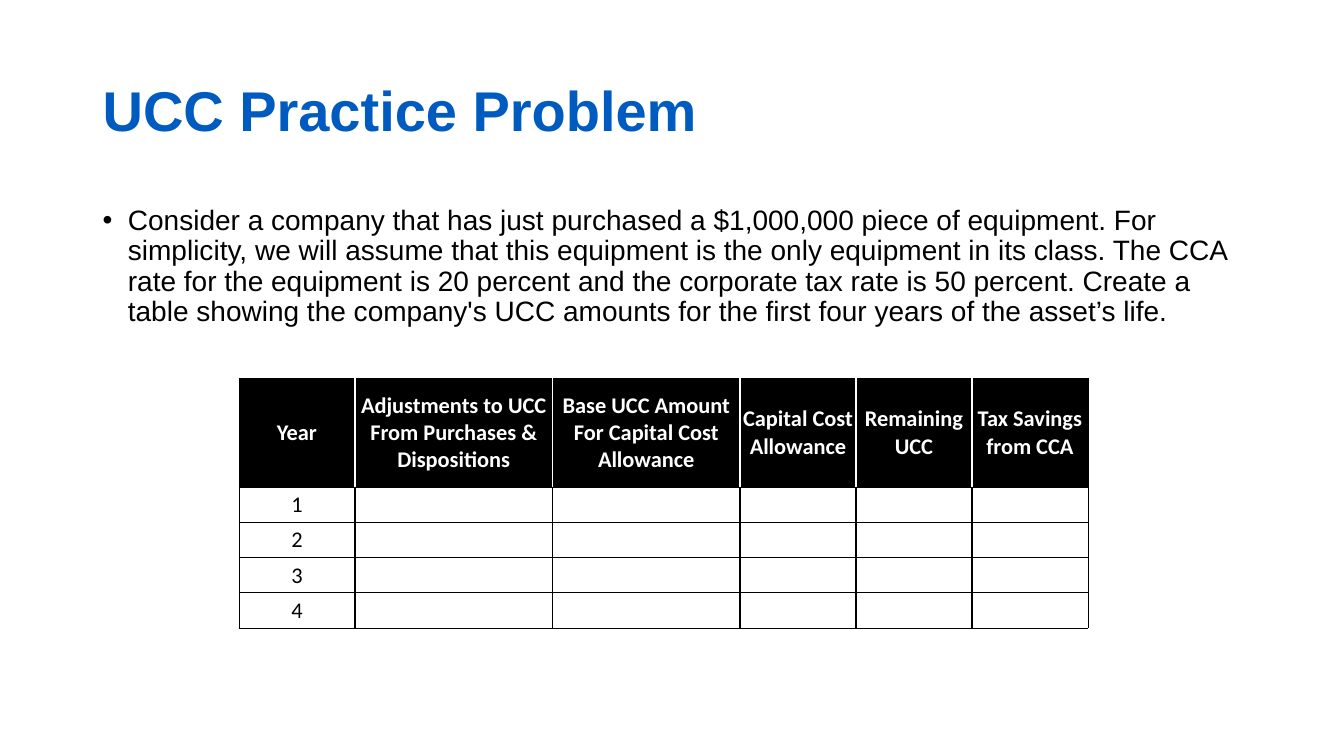
from lxml import etree
from pptx import Presentation
from pptx.dml.color import RGBColor
from pptx.enum.text import MSO_ANCHOR, PP_ALIGN
from pptx.oxml.ns import qn
from pptx.util import Inches, Pt

MIDDLE, TOP = MSO_ANCHOR.MIDDLE, MSO_ANCHOR.TOP
CENTER = PP_ALIGN.CENTER
BLANK = 6
COLORS = {"title": "005BC0", "ink": "000000", "paper": "FFFFFF"}
TITLE = "UCC Practice Problem"
PROBLEM = (
    "Consider a company that has just purchased a $1,000,000 piece of equipment. "
    "For simplicity, we will assume that this equipment is the only equipment in "
    "its class. The CCA rate for the equipment is 20 percent and the corporate tax "
    "rate is 50 percent. Create a table showing the company's UCC amounts for the "
    "first four years of the asset’s life."
)
HEADERS = [
    "Year",
    "Adjustments to UCC From Purchases & Dispositions",
    "Base UCC Amount For Capital Cost Allowance",
    "Capital Cost Allowance",
    "Remaining UCC",
    "Tax Savings from CCA",
]
COL_WIDTHS = [1.15, 1.96, 1.86, 1.15, 1.15, 1.15]
YEARS = 4
HEADER_HEIGHT, YEAR_HEIGHT = 1.08, 0.35


def color(name):
    return RGBColor.from_string(COLORS[name])


def add_run(p, text, size, font, color_name, bold=False):
    r = p.add_run()
    r.text = text
    r.font.size = Pt(size)
    r.font.name = font
    r.font.bold = bold
    r.font.color.rgb = color(color_name)


def add_text_box(slide, box, anchor):
    """Add a wrapping text box and return its first paragraph."""
    tf = slide.shapes.add_textbox(*map(Inches, box)).text_frame
    tf.word_wrap = True
    tf.vertical_anchor = anchor
    p = tf.paragraphs[0]
    p.line_spacing = 0.9
    return p


def add_title(slide, box):
    p = add_text_box(slide, box, MIDDLE)
    add_run(p, TITLE, 40, "Arial", "title", bold=True)


def add_problem(slide, box):
    p = add_text_box(slide, box, TOP)
    p.space_before = Pt(12)
    pPr = p._p.get_or_add_pPr()
    pPr.set("marL", str(Inches(0.25)))
    pPr.set("indent", str(Inches(-0.25)))
    etree.SubElement(pPr, qn("a:buFont"), typeface="Arial")
    etree.SubElement(pPr, qn("a:buChar"), char="•")
    add_run(p, PROBLEM, 20, "Arial", "ink")


def set_borders(cell, borders):
    """Draw (color name, points) lines on the left, right, top and bottom."""
    tcPr = cell._tc.get_or_add_tcPr()
    for i, (side, (name, points)) in enumerate(zip("LRTB", borders)):
        ln = etree.Element(qn(f"a:ln{side}"), w=str(Pt(points)))
        fill = etree.SubElement(ln, qn("a:solidFill"))
        etree.SubElement(fill, qn("a:srgbClr"), val=COLORS[name])
        tcPr.insert(i, ln)


def cell_borders(row, col):
    """Thin frame around table and header, white dividers inside the header."""
    thin, inner = ("ink", 0.5), ("ink", 1)
    divider = ("paper", 1) if row == 0 else inner
    return (
        thin if col == 0 else divider,
        thin if col == len(HEADERS) - 1 else divider,
        thin if row <= 1 else inner,
        thin if row in (0, YEARS) else inner,
    )


def format_cell(cell, row, col):
    cell.margin_left = cell.margin_right = cell.margin_top = Inches(0.01)
    cell.margin_bottom = 0
    cell.vertical_anchor = MIDDLE
    p = cell.text_frame.paragraphs[0]
    p.alignment = CENTER
    if row == 0:
        cell.fill.solid()
        cell.fill.fore_color.rgb = color("ink")
        add_run(p, HEADERS[col], 16, "Calibri", "paper", bold=True)
    else:
        cell.fill.background()
        if col == 0:
            add_run(p, str(row), 16, "Calibri", "ink")
    set_borders(cell, cell_borders(row, col))


def add_ucc_table(slide, left, top):
    heights = [HEADER_HEIGHT] + [YEAR_HEIGHT] * YEARS
    box = (left, top, sum(COL_WIDTHS), sum(heights))
    table = slide.shapes.add_table(
        len(heights), len(HEADERS), *map(Inches, box)
    ).table
    table.horz_banding = False
    for column, width in zip(table.columns, COL_WIDTHS):
        column.width = Inches(width)
    for row, height in enumerate(heights):
        table.rows[row].height = Inches(height)
        for col in range(len(HEADERS)):
            format_cell(table.cell(row, col), row, col)


def main():
    prs = Presentation()
    prs.slide_width, prs.slide_height = Inches(13.33), Inches(7.5)
    slide = prs.slides.add_slide(prs.slide_layouts[BLANK])
    add_title(slide, (0.92, 0.4, 11.5, 1.45))
    add_problem(slide, (0.92, 2, 11.5, 4.76))
    add_ucc_table(slide, 2.37, 3.75)
    prs.save("out.pptx")


if __name__ == "__main__":
    main()
